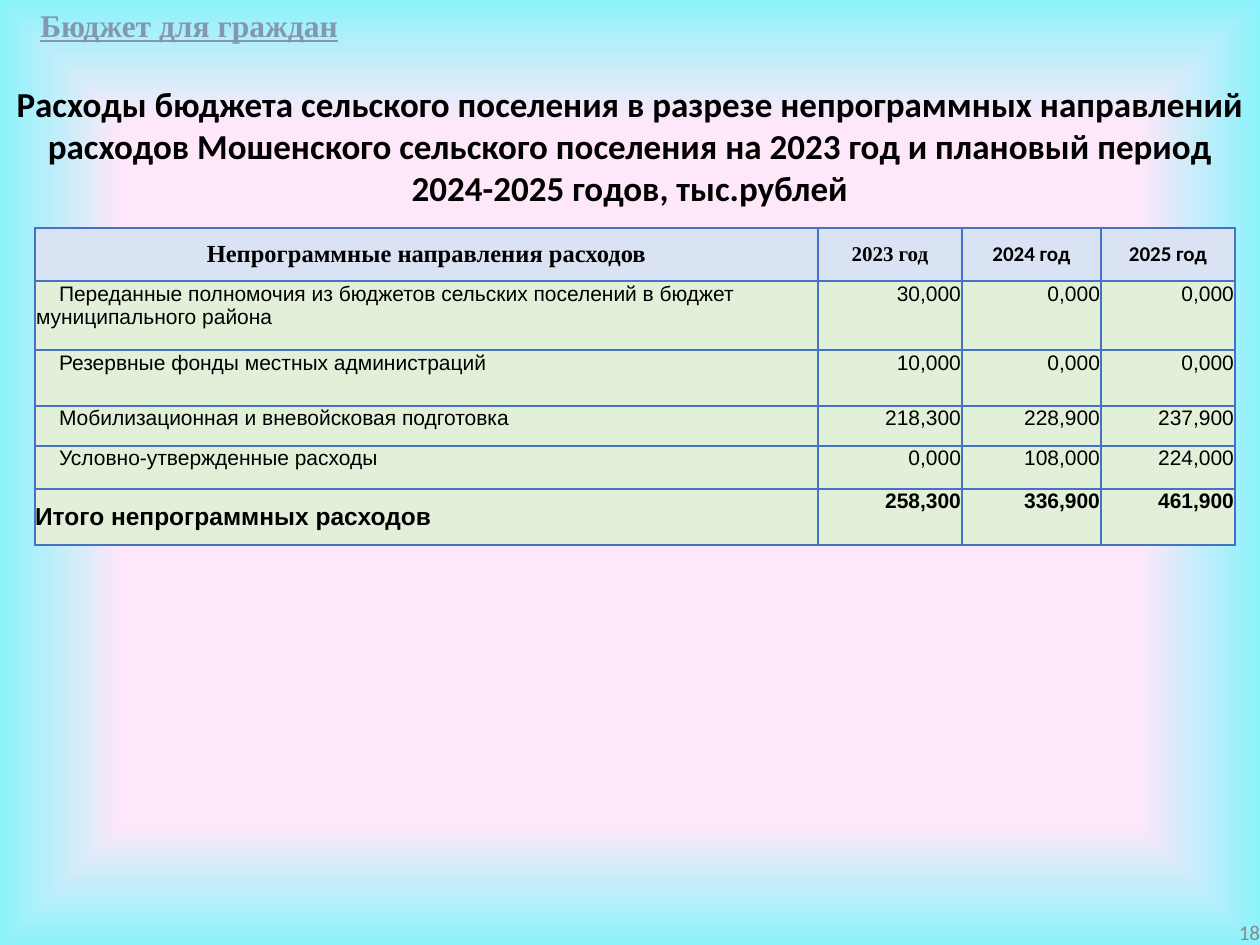
"""Builds the slide on non-programme budget spending of a rural settlement."""
from lxml.etree import SubElement
from pptx import Presentation
from pptx.dml.color import RGBColor as RGB
from pptx.enum.text import MSO_ANCHOR as ANCHOR, MSO_AUTO_SIZE as FIT, PP_ALIGN as ALIGN
from pptx.oxml import parse_xml
from pptx.oxml.ns import nsdecls, qn
from pptx.util import Emu, Pt

BANNER = "Бюджет для граждан"
TITLE = ("Расходы бюджета сельского поселения в разрезе непрограммных направлений "
         "расходов Мошенского сельского поселения на 2023 год и плановый период "
         "2024-2025 годов, тыс.рублей")
PAGE_NUMBER = "18"
HEADER = ("Непрограммные направления расходов", "2023 год", "2024 год", "2025 год")
EXPENSES = [
    ("Переданные полномочия из бюджетов сельских поселений в бюджет муниципального района",
     "30,000", "0,000", "0,000"),
    ("Резервные фонды местных администраций", "10,000", "0,000", "0,000"),
    ("Мобилизационная и вневойсковая подготовка", "218,300", "228,900", "237,900"),
    ("Условно-утвержденные расходы", "0,000", "108,000", "224,000"),
]
TOTAL = ("Итого непрограммных расходов", "258,300", "336,900", "461,900")

COLUMN_WIDTHS = (783, 144, 139, 134)
ROW_HEIGHTS = (53, 69, 56, 40, 43, 56)
NAME_INDENT = 23

BLACK = RGB(0, 0, 0)
GREY = RGB(0x89, 0x89, 0x89)
SLATE = RGB(0x84, 0x97, 0xB0)
HEADER_BLUE = RGB(0xDA, 0xE3, 0xF3)
ROW_GREEN = RGB(0xE2, 0xF0, 0xD9)
BORDER_BLUE = RGB(0x44, 0x72, 0xC4)
BACKDROP = [(74, RGB(0xFF, 0xE7, 0xFA)), (100, RGB(0x8B, 0xF3, 0xFB)),
            (100, RGB(0xB5, 0xD2, 0xEC)), (100, RGB(0xCE, 0xE1, 0xF2))]

SERIF, SANS, ARIAL = "Times New Roman", "Calibri", "Arial"
HEADER_FONTS = ((SERIF, 14), (SERIF, 12), (SANS, 12), (SANS, 12))
MARGINS = ("margin_left", "margin_top", "margin_right", "margin_bottom")


def px(length):
    return Emu(round(length * 914400 / 126))


def apply(target, values):
    for name, value in values.items():
        setattr(target, name, value)


def write(frame, text, font, size, color=BLACK, align=ALIGN.LEFT, **style):
    paragraph = frame.paragraphs[0]
    paragraph.alignment = align
    run = paragraph.add_run()
    run.text = text
    apply(run.font, {"name": font, "size": Pt(size), **style})
    run.font.color.rgb = color
    return run


def place(shape, left, top, width, height):
    apply(shape, {"left": px(left), "top": px(top), "width": px(width), "height": px(height)})


def paint_backdrop(slide):
    slide.background.fill.solid()
    properties = slide.background.fill._xPr
    properties.remove(properties.find(qn("a:solidFill")))
    stops = "".join(f'<a:gs pos="{at * 1000}"><a:srgbClr val="{color}"/></a:gs>'
                    for at, color in BACKDROP)
    properties.insert(0, parse_xml(
        f'<a:gradFill {nsdecls("a")} rotWithShape="1"><a:gsLst>{stops}</a:gsLst>'
        '<a:path path="shape"><a:fillToRect l="50000" t="50000" r="50000" b="50000"/></a:path>'
        '</a:gradFill>'))


def cast_shadow(run):
    fill = run.font._element.find(qn("a:solidFill"))
    fill.addnext(parse_xml(
        f'<a:effectLst {nsdecls("a")}><a:outerShdw blurRad="38100" dist="38100" dir="2700000">'
        '<a:srgbClr val="000000"><a:alpha val="43000"/></a:srgbClr></a:outerShdw></a:effectLst>'))


def outline(cell):
    properties = cell._tc.get_or_add_tcPr()
    for index, side in enumerate(("lnL", "lnR", "lnT", "lnB")):
        properties.insert(index, parse_xml(
            f'<a:{side} {nsdecls("a")} w="12700"><a:solidFill>'
            f'<a:srgbClr val="{BORDER_BLUE}"/></a:solidFill></a:{side}>'))


def fill_cell(cell, text, row, column):
    header, total, name = row == 0, row == len(ROW_HEIGHTS) - 1, column == 0
    centred = header or (total and name)
    inset = 0 if centred else 1
    apply(cell, dict(zip(MARGINS, map(px, (inset, inset, inset, 0)))))
    cell.vertical_anchor = ANCHOR.MIDDLE if centred else ANCHOR.TOP
    cell.fill.solid()
    cell.fill.fore_color.rgb = HEADER_BLUE if header else ROW_GREEN
    outline(cell)
    font, size = HEADER_FONTS[column] if header else (ARIAL, 14 if total and name else 12)
    align = ALIGN.CENTER if header else ALIGN.LEFT if name else ALIGN.RIGHT
    write(cell.text_frame, text, font, size, align=align, bold=header or total)
    if name and not centred:
        layout = cell.text_frame.paragraphs[0]._p.get_or_add_pPr()
        layout.set("marL", "0")
        layout.set("indent", str(px(NAME_INDENT)))


def add_expenses(slide):
    rows = [HEADER, *EXPENSES, TOTAL]
    table = slide.shapes.add_table(len(rows), len(HEADER), px(35), px(228),
                                   px(sum(COLUMN_WIDTHS)), px(sum(ROW_HEIGHTS))).table
    apply(table, {"first_row": False, "horz_banding": False})
    for column, width in zip(table.columns, COLUMN_WIDTHS):
        column.width = px(width)
    for row, height in zip(table.rows, ROW_HEIGHTS):
        row.height = px(height)
    for r, texts in enumerate(rows):
        for c, text in enumerate(texts):
            fill_cell(table.cell(r, c), text, r, c)


def main():
    deck = Presentation()
    apply(deck, {"slide_width": px(1260), "slide_height": px(945)})
    slide = deck.slides.add_slide(deck.slide_layouts[5])
    paint_backdrop(slide)

    number = slide.shapes.add_textbox(px(966), px(919), px(294), px(26)).text_frame
    apply(number, {"word_wrap": True, "vertical_anchor": ANCHOR.MIDDLE,
                   **dict.fromkeys(MARGINS, 0)})
    write(number, PAGE_NUMBER, SANS, 12, GREY, ALIGN.RIGHT)

    add_expenses(slide)

    title = slide.shapes.title
    place(title, 0, 76, 1260, 89)
    apply(title.text_frame, {"word_wrap": True, "auto_size": FIT.NONE,
                             "vertical_anchor": ANCHOR.TOP})
    cast_shadow(write(title.text_frame, TITLE, SANS, 20, align=ALIGN.CENTER, bold=True))

    banner = slide.shapes.add_textbox(px(28), 0, px(326), px(50)).text_frame
    apply(banner, {"word_wrap": False, "auto_size": FIT.SHAPE_TO_FIT_TEXT})
    cast_shadow(write(banner, BANNER, SERIF, 18, SLATE, bold=True, underline=True))

    deck.save("out.pptx")


if __name__ == "__main__":
    main()
